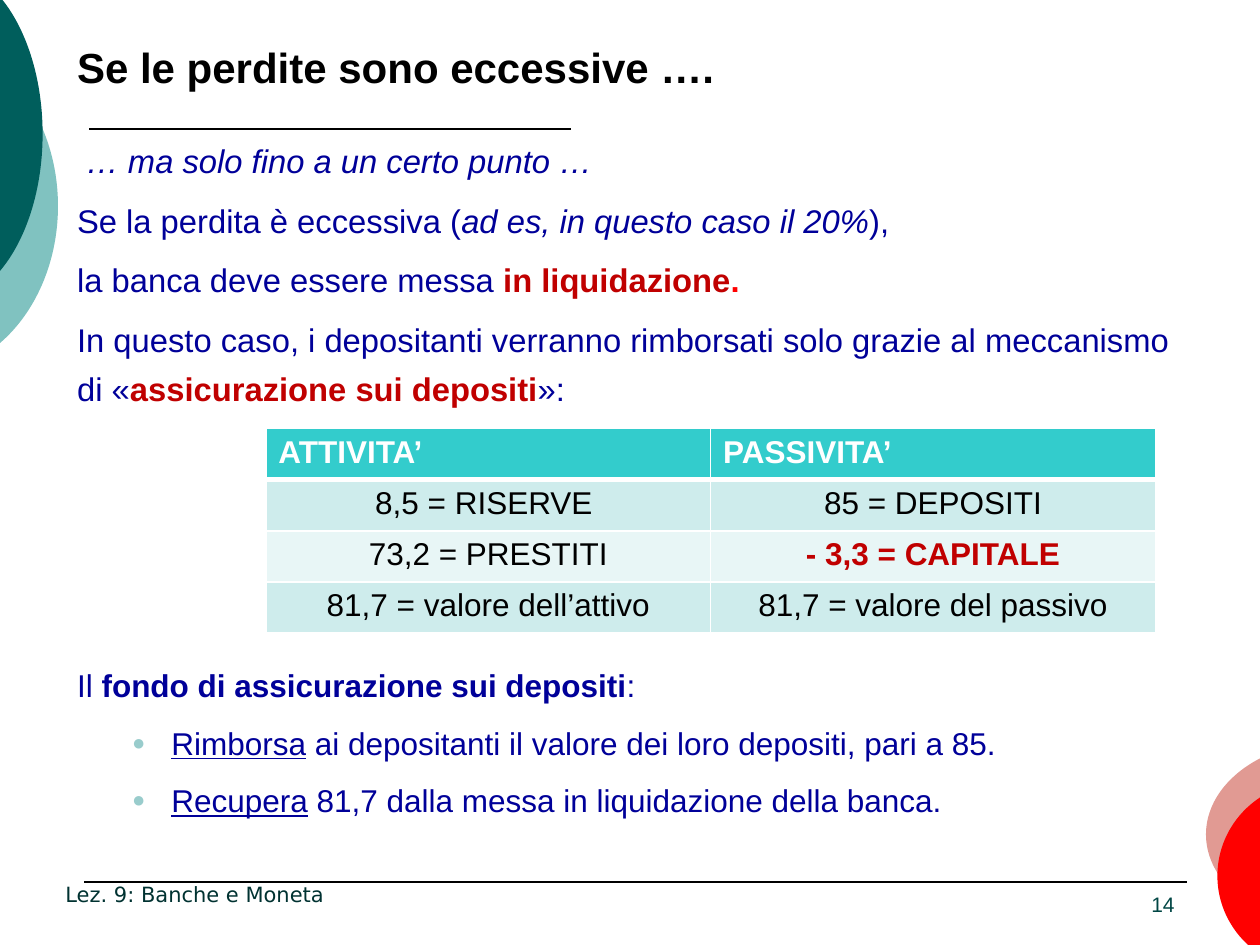
from math import acos, atan2, cos, degrees, sin

from lxml.etree import SubElement
from pptx import Presentation
from pptx.dml.color import RGBColor
from pptx.enum.shapes import MSO_CONNECTOR, MSO_SHAPE
from pptx.enum.text import MSO_ANCHOR as Anchor, MSO_AUTO_SIZE as AutoSize, PP_ALIGN as Align
from pptx.oxml import parse_xml
from pptx.oxml.ns import nsdecls, qn
from pptx.util import Cm, Pt

SLIDE_W, SLIDE_H = 25.4, 19.05
COLORS = {
    "black": "000000", "white": "FFFFFF", "navy": "000099",
    "dark_red": "C00000", "red": "FF0000", "pink": "E19A93",
    "teal": "005E5C", "pale_teal": "80C2C0", "bullet": "99CCCC",
    "number": "004644", "footer": "003231",
    "header": "33CCCC", "band_dark": "CEECEC", "band_light": "E8F6F6",
}

# Ellipses cut by the slide edge: left, top, width, height, edge, direction, colour
EDGE_DISCS = [
    (-4.29, 0.79, 5.46, 6.73, 0, 1, "pale_teal"),
    (-3.23, -0.69, 4.09, 6.78, 0, 1, "teal"),
    (24.31, 14.94, 5.18, 3.76, SLIDE_W, -1, "pink"),
    (24.54, 15.75, 3.89, 3.81, SLIDE_W, -1, "red"),
]

# Body paragraphs: text size, space before, bulleted, runs of (text, format)
TABLE_GAP = 142
BODY = [
    (18.7, 6, False, [(" … ma solo fino a un certo punto …", {"italic": True})]),
    (18.7, 6, False, [("Se la perdita è eccessiva (", {}),
                      ("ad es, in questo caso il 20%", {"italic": True}),
                      ("),", {})]),
    (18.7, 6, False, [("la banca deve essere messa ", {}),
                      ("in liquidazione", {"bold": True, "color": "dark_red"}),
                      (".", {"bold": True, "color": "red"})]),
    (18.7, 6, False, [("In questo caso, i depositanti verranno rimborsati solo "
                       "grazie al meccanismo di «", {}),
                      ("assicurazione sui depositi", {"bold": True, "color": "dark_red"}),
                      ("»:", {})]),
    (18, TABLE_GAP, False, [("Il ", {}),
                            ("fondo di assicurazione sui depositi", {"bold": True}),
                            (":", {})]),
    (18, 6, True, [("Rimborsa", {"underline": True}),
                   (" ai depositanti il valore dei loro depositi, pari a 85.", {})]),
    (18, 6, True, [("Recupera", {"underline": True}),
                   (" 81,7 dalla messa in liquidazione della banca.", {})]),
]

BALANCE = [
    ("ATTIVITA’", "PASSIVITA’"),
    ("8,5 = RISERVE ", "85 = DEPOSITI"),
    ("73,2 = PRESTITI", "- 3,3 = CAPITALE"),
    ("81,7 = valore dell’attivo", "81,7 = valore del passivo"),
]
ROW_FILLS = ["header", "band_dark", "band_light", "band_dark"]
LOSS_CELL = (2, 1)


def rgb(name):
    return RGBColor.from_string(COLORS[name])


def add_run(paragraph, text, size, color, font="Arial", bold=False, italic=False, underline=False):
    run = paragraph.add_run()
    run.text = text
    run.font.name, run.font.size = font, Pt(size)
    run.font.bold, run.font.italic, run.font.underline = bold, italic, underline
    run.font.color.rgb = rgb(color)


def place(shape, left, top, width, height):
    shape.left, shape.top, shape.width, shape.height = map(Cm, (left, top, width, height))


def add_edge_disc(slide, left, top, width, height, edge, direction, color):
    rx, ry = width / 2, height / 2
    cut = acos(direction * (edge - left - rx) / rx)
    angle = degrees(atan2(ry * sin(cut), rx * cos(cut)))
    disc = slide.shapes.add_shape(MSO_SHAPE.CHORD, *map(Cm, (left, top, width, height)))
    # Chord angles are stored in 60000ths of a degree, adjustments in 100000ths
    disc.adjustments[0] = (360 - angle) * 0.6
    disc.adjustments[1] = angle * 0.6
    disc.rotation = 0 if direction > 0 else 180
    disc.shadow.inherit = False
    disc.fill.solid()
    disc.fill.fore_color.rgb = rgb(color)
    disc.line.fill.background()


def add_rule(slide, x1, x2, y, width):
    rule = slide.shapes.add_connector(MSO_CONNECTOR.STRAIGHT, Cm(x1), Cm(y), Cm(x2), Cm(y))
    rule.line.color.rgb = rgb("black")
    rule.line.width = Pt(width)
    SubElement(rule._element.spPr, qn("a:effectLst"))


def add_label(slide, box, text, color, font="Arial", align=Align.LEFT):
    frame = slide.shapes.add_textbox(*map(Cm, box)).text_frame
    frame.word_wrap = True
    frame.vertical_anchor = Anchor.BOTTOM
    frame.paragraphs[0].alignment = align
    add_run(frame.paragraphs[0], text, 12, color, font)


def fill_title(title):
    place(title, 1.3, 0.48, 23.6, 1.5)
    frame = title.text_frame
    frame.auto_size = AutoSize.NONE
    frame.vertical_anchor = Anchor.BOTTOM
    frame.paragraphs[0].alignment = Align.LEFT
    add_run(frame.paragraphs[0], "Se le perdite sono eccessive ….", 24, "black", bold=True)


def set_bullet(paragraph, bulleted):
    props = paragraph._p.get_or_add_pPr()
    props.set("marL", str(Cm(1.9) if bulleted else 0))
    props.set("indent", str(Cm(-0.79) if bulleted else 0))
    if not bulleted:
        SubElement(props, qn("a:buNone"))
        return
    color = SubElement(props, qn("a:buClr"))
    SubElement(color, qn("a:srgbClr"), val=COLORS["bullet"])
    SubElement(props, qn("a:buSzPct"), val="70000")
    SubElement(props, qn("a:buFont"), typeface="Arial")
    SubElement(props, qn("a:buChar"), char="●")


def fill_body(body):
    place(body, 1.3, 2.51, 23.19, 15.27)
    frame = body.text_frame
    frame.auto_size = AutoSize.NONE
    for i, (size, before, bulleted, runs) in enumerate(BODY):
        paragraph = frame.add_paragraph() if i else frame.paragraphs[0]
        paragraph.level = int(bulleted)
        paragraph.line_spacing = 1.25
        paragraph.space_before = Pt(before)
        set_bullet(paragraph, bulleted)
        for text, style in runs:
            add_run(paragraph, text, size, **{"color": "navy", **style})


def set_borders(cell, top, bottom):
    props = cell._tc.get_or_add_tcPr()
    widths = {"lnL": 1, "lnR": 1, "lnT": top, "lnB": bottom}
    for i, (side, width) in enumerate(widths.items()):
        props.insert(i, parse_xml(
            f'<a:{side} {nsdecls("a")} w="{Pt(width)}"><a:solidFill>'
            f'<a:srgbClr val="{COLORS["white"]}"/></a:solidFill></a:{side}>'))


def add_balance(slide):
    rows, cols = len(BALANCE), len(BALANCE[0])
    table = slide.shapes.add_table(rows, cols, Cm(5.36), Cm(8.64),
                                   Cm(17.93), Cm(1.03 * rows)).table
    for r, entries in enumerate(BALANCE):
        for c, text in enumerate(entries):
            cell = table.cell(r, c)
            cell.fill.solid()
            cell.fill.fore_color.rgb = rgb(ROW_FILLS[r])
            set_borders(cell, top=3 if r == 1 else 1, bottom=3 if r == 0 else 1)
            is_header, is_loss = r == 0, (r, c) == LOSS_CELL
            color = "white" if is_header else "dark_red" if is_loss else "black"
            paragraph = cell.text_frame.paragraphs[0]
            paragraph.alignment = Align.LEFT if is_header else Align.CENTER
            add_run(paragraph, text, 18, color, bold=is_header or is_loss)


def main():
    prs = Presentation()
    prs.slide_width, prs.slide_height = Cm(SLIDE_W), Cm(SLIDE_H)
    slide = prs.slides.add_slide(prs.slide_layouts[1])

    # Edge decoration and rules
    for disc in EDGE_DISCS:
        add_edge_disc(slide, *disc)
    add_rule(slide, 1.8, 11.51, 2.6, 1)
    add_rule(slide, 1.7, 23.93, 17.78, 0.75)

    # Title, text and balance sheet
    fill_title(slide.shapes.title)
    fill_body(slide.placeholders[1])
    add_balance(slide)

    # Footer and page number
    add_label(slide, (1.07, 17.76, 10.8, 0.64), "Lez. 9: Banche e Moneta", "footer", "DejaVu Sans")
    add_label(slide, (20.7, 17.33, 3.23, 1.27), "14", "number", align=Align.RIGHT)

    prs.save("out.pptx")


if __name__ == "__main__":
    main()
